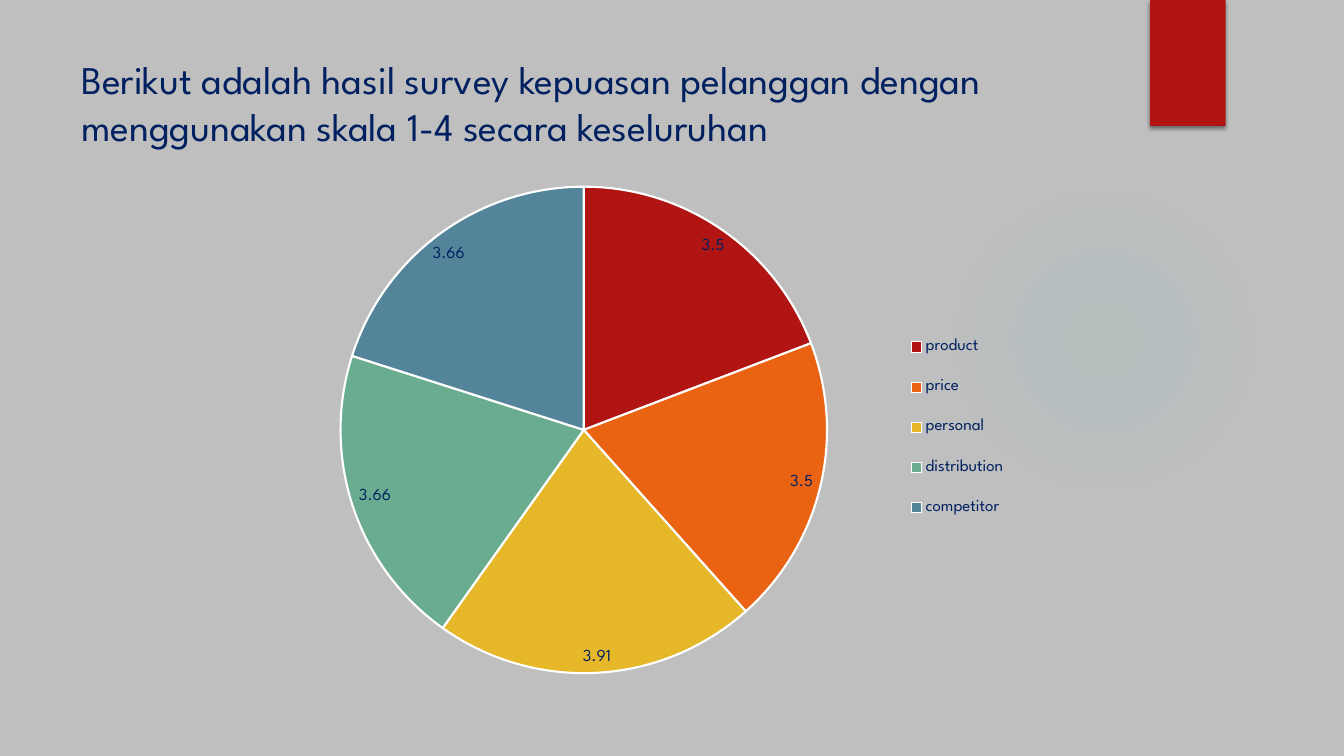
from lxml import etree
from pptx import Presentation
from pptx.chart.data import CategoryChartData
from pptx.dml.color import RGBColor
from pptx.enum.chart import XL_CHART_TYPE as ChartType
from pptx.enum.chart import XL_LABEL_POSITION as LabelPosition
from pptx.enum.chart import XL_LEGEND_POSITION as LegendPosition
from pptx.enum.shapes import MSO_SHAPE as Shape
from pptx.enum.text import MSO_ANCHOR as Anchor
from pptx.oxml import parse_xml
from pptx.oxml.ns import nsdecls, qn
from pptx.util import Pt

COLORS = {
    "background": "BFBFBF",
    "text": "002060",
    "ribbon": "B01513",
    "glow": "50B9C1",
    "shadow": "000000",
    "border": "FFFFFF",
}
SLICES = [
    ("product", 3.5, "B01513"),
    ("price", 3.5, "EA6312"),
    ("personal", 3.91, "E6B729"),
    ("distribution", 3.66, "6AAC90"),
    ("competitor", 3.66, "54849A"),
]
GLOW_STOPS = [(0, 7), (36, 6), (69, 0)]  # position and opacity, percent


class SurveySlide:
    font_name = "League Spartan"

    def __init__(self, presentation):
        self.slide = presentation.slides.add_slide(presentation.slide_layouts[6])
        self.paint(self.slide.background.fill, COLORS["background"])

    def paint(self, fill, color):
        fill.solid()
        fill.fore_color.rgb = RGBColor.from_string(color)

    def style_font(self, font, size):
        font.name = self.font_name
        font.size = Pt(size)
        font.color.rgb = RGBColor.from_string(COLORS["text"])

    def add_shape(self, kind, left, top, width, height):
        shape = self.slide.shapes.add_shape(
            kind, Pt(left), Pt(top), Pt(width), Pt(height))
        shape.shadow.inherit = False
        shape.line.fill.background()
        return shape

    def add_glow(self, left, top, size):
        shape = self.add_shape(Shape.OVAL, left, top, size, size)
        stops = "".join(
            f'<a:gs pos="{position * 1000}"><a:srgbClr val="{COLORS["glow"]}">'
            f'<a:alpha val="{opacity * 1000}"/></a:srgbClr></a:gs>'
            for position, opacity in GLOW_STOPS)
        gradient = parse_xml(
            f'<a:gradFill {nsdecls("a")} rotWithShape="1"><a:gsLst>{stops}</a:gsLst>'
            '<a:path path="circle"><a:fillToRect l="50000" t="50000" r="50000" '
            'b="50000"/></a:path></a:gradFill>')
        shape.element.spPr.find(qn("a:prstGeom")).addnext(gradient)

    def add_ribbon(self, left, top, width, height):
        shape = self.add_shape(Shape.RECTANGLE, left, top, width, height)
        self.paint(shape.fill, COLORS["ribbon"])
        shape.element.spPr.find(qn("a:effectLst")).append(parse_xml(
            f'<a:outerShdw {nsdecls("a")} blurRad="{Pt(3)}" dist="{Pt(2)}" '
            f'dir="5400000" rotWithShape="0"><a:srgbClr val="{COLORS["shadow"]}">'
            '<a:alpha val="45000"/></a:srgbClr></a:outerShdw>'))

    def add_title(self, text, left, top, width, height):
        box = self.slide.shapes.add_textbox(
            Pt(left), Pt(top), Pt(width), Pt(height))
        frame = box.text_frame
        frame.word_wrap = True
        frame.vertical_anchor = Anchor.TOP
        run = frame.paragraphs[0].add_run()
        run.text = text
        self.style_font(run.font, 28)

    def place(self, element, before, inner=False, **fractions):
        """Set a manual layout, in fractions of the chart area."""
        for old in element.findall(qn("c:layout")):
            element.remove(old)
        layout = etree.Element(qn("c:layout"))
        manual = etree.SubElement(layout, qn("c:manualLayout"))
        if inner:
            etree.SubElement(manual, qn("c:layoutTarget")).set("val", "inner")
        for side in "xy":
            etree.SubElement(manual, qn(f"c:{side}Mode")).set("val", "edge")
        for name, value in fractions.items():
            etree.SubElement(manual, qn(f"c:{name}")).set("val", str(value))
        element.find(qn(before)).addprevious(layout)

    def add_pie(self, left, top, width, height):
        data = CategoryChartData()
        data.categories = [name for name, _, _ in SLICES]
        data.add_series("Series 1", [value for _, value, _ in SLICES])
        chart = self.slide.shapes.add_chart(
            ChartType.PIE, Pt(left), Pt(top), Pt(width), Pt(height), data).chart
        self.style_font(chart.font, 10)
        chart.has_title = False

        # Slices
        plot = chart.plots[0]
        plot.vary_by_categories = True
        for index, (_, _, color) in enumerate(SLICES):
            slice_format = plot.series[0].points[index].format
            self.paint(slice_format.fill, color)
            self.paint(slice_format.line.fill, COLORS["border"])
            slice_format.line.width = Pt(1.5)

        # Value labels
        labels = plot.series[0].data_labels
        labels.show_value = True
        labels.show_percentage = False
        labels.show_legend_key = False
        labels.position = LabelPosition.BEST_FIT
        self.style_font(labels.font, 12)

        # Legend
        chart.has_legend = True
        legend = chart.legend
        legend.position = LegendPosition.RIGHT
        legend.include_in_layout = False
        self.style_font(legend.font, 12)

        # Positions inside the chart
        plot_area = chart.element.find(".//" + qn("c:plotArea"))
        self.place(plot_area, "c:pieChart", inner=True, x=0.21, y=0.03, w=0.47, h=0.95)
        legend_element = chart.element.find(".//" + qn("c:legend"))
        self.place(legend_element, "c:overlay", x=0.75, y=0.28, w=0.11, h=0.44)


def main():
    presentation = Presentation()
    presentation.slide_width = Pt(960)
    presentation.slide_height = Pt(540)
    survey = SurveySlide(presentation)

    # Decoration
    survey.add_glow(677.5, 131.8, 221.8)
    survey.add_ribbon(821.5, 0, 54, 90)

    # Title and chart
    survey.add_title(
        "Berikut adalah hasil survey kepuasan pelanggan dengan "
        "menggunakan skala 1-4 secara keseluruhan", 51, 36, 741, 110)
    survey.add_pie(87, 122.4, 741.6, 365.8)

    presentation.save("out.pptx")


if __name__ == "__main__":
    main()
